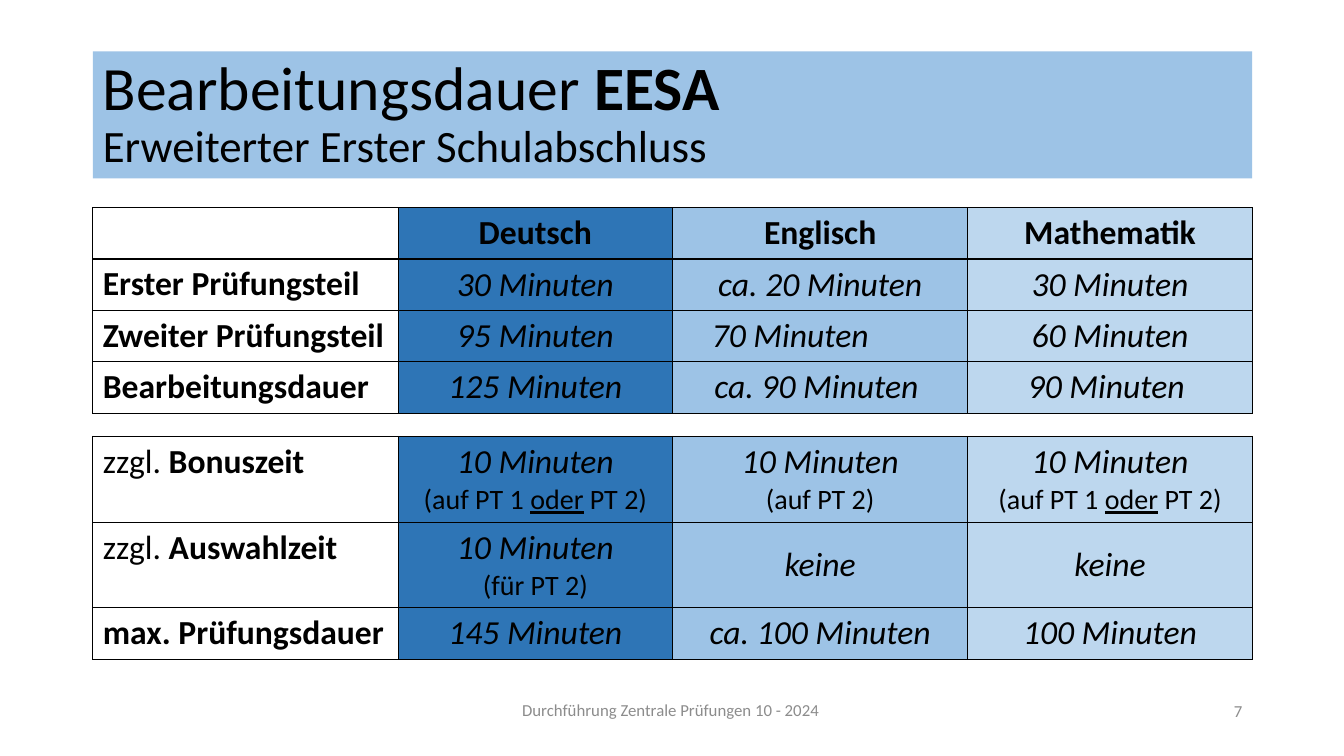
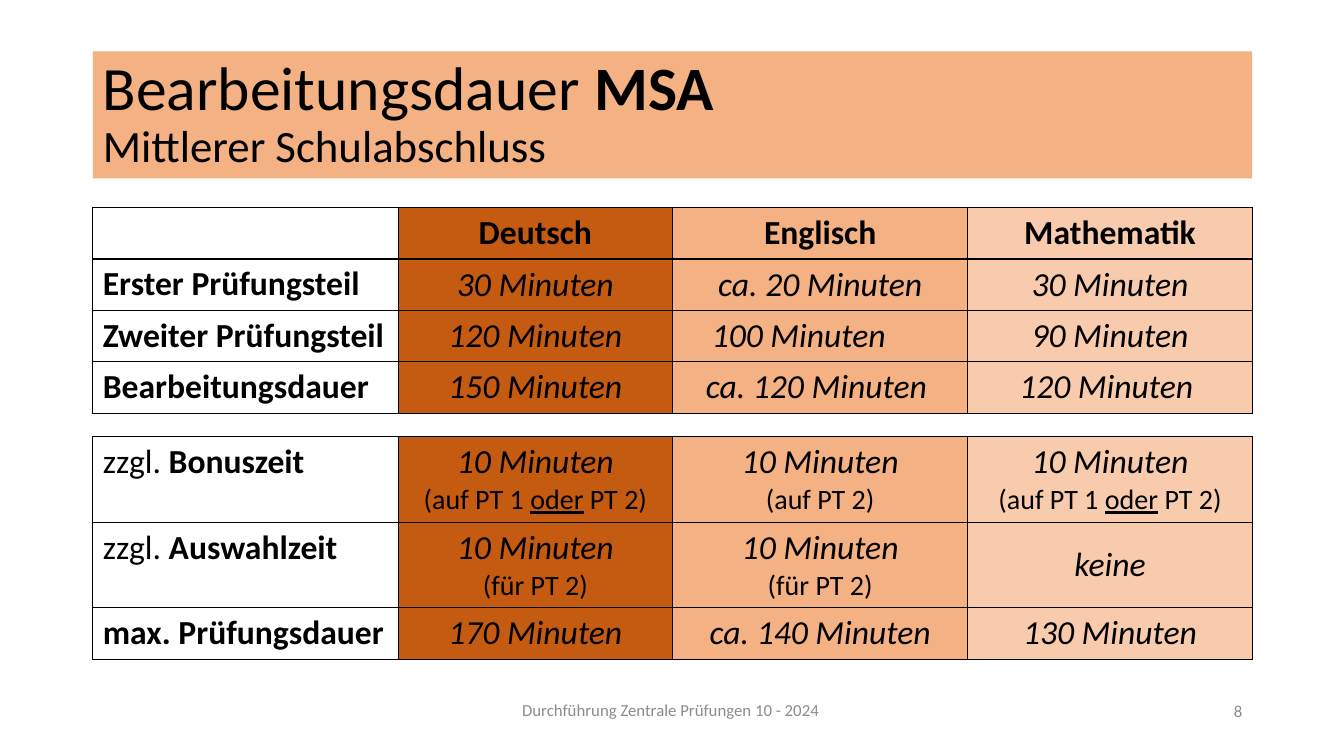
from dataclasses import dataclass

from lxml import etree
from pptx import Presentation
from pptx.dml.color import RGBColor
from pptx.enum.text import MSO_ANCHOR, MSO_AUTO_SIZE, PP_ALIGN
from pptx.oxml.ns import qn
from pptx.util import Inches, Pt

LEFT, CENTER, RIGHT = PP_ALIGN.LEFT, PP_ALIGN.CENTER, PP_ALIGN.RIGHT
TOP, MIDDLE = MSO_ANCHOR.TOP, MSO_ANCHOR.MIDDLE
NO_AUTOFIT = MSO_AUTO_SIZE.NONE

FONT = "Calibri"
BLACK, GRAY = "000000", "8C8C8C"
MARGIN, CONTENT_WIDTH = 0.92, 11.5
COLUMN_WIDTHS = (3.03, 2.72, 2.93, 2.82)
SINGLE_ROW, DOUBLE_ROW = 0.51, 0.85
FOOTER = "Durchführung Zentrale Prüfungen 10 - 2024"


@dataclass(frozen=True)
class Label:
    """Row heading: a plain prefix and a bold name."""
    name: str
    prefix: str = ""


@dataclass(frozen=True)
class Duration:
    """Exam time with an optional smaller note; an indent replaces centring."""
    time: str
    note: str = ""
    indent: float = 0


@dataclass(frozen=True)
class Row:
    label: Label
    durations: tuple[Duration, ...]
    height: float = SINGLE_ROW


@dataclass(frozen=True)
class Exam:
    short_name: str
    full_name: str
    page: int
    band: str
    subject_fills: tuple[str, str, str]
    working_times: tuple[Row, ...]
    extra_times: tuple[Row, ...]


SUBJECTS = ("Deutsch", "Englisch", "Mathematik")
FIRST_PART = Row(Label("Erster Prüfungsteil"), (
    Duration("30 Minuten"), Duration("ca. 20 Minuten"), Duration("30 Minuten")))
BONUS = Row(Label("Bonuszeit", "zzgl. "), (
    Duration("10 Minuten", "(auf PT 1 oder PT 2)"),
    Duration("10 Minuten", "(auf PT 2)"),
    Duration("10 Minuten", "(auf PT 1 oder PT 2)")), DOUBLE_ROW)
CHOICE_LABEL = Label("Auswahlzeit", "zzgl. ")
CHOICE = Duration("10 Minuten", "(für PT 2)")
NO_CHOICE = Duration("keine")


def second_part(german: str, english: str, maths: str) -> Row:
    return Row(Label("Zweiter Prüfungsteil"),
               (Duration(german), Duration(english, indent=0.29), Duration(maths)))


def total(name: str, *times: str) -> Row:
    return Row(Label(name), tuple(Duration(time) for time in times))


EXAMS = (
    Exam("EESA", "Erweiterter Erster Schulabschluss", 7, "9DC3E6",
         ("2E75B6", "9DC3E6", "BDD7EE"),
         (FIRST_PART,
          second_part("95 Minuten", "70 Minuten", "60 Minuten"),
          total("Bearbeitungsdauer", "125 Minuten", "ca. 90 Minuten ", "90 Minuten ")),
         (BONUS,
          Row(CHOICE_LABEL, (CHOICE, NO_CHOICE, NO_CHOICE), DOUBLE_ROW),
          total("max. Prüfungsdauer", "145 Minuten", "ca. 100 Minuten", "100 Minuten"))),
    Exam("MSA", "Mittlerer Schulabschluss", 8, "F4B183",
         ("C55A11", "F4B183", "F8CBAD"),
         (FIRST_PART,
          second_part("120 Minuten", "100 Minuten", "90 Minuten"),
          total("Bearbeitungsdauer", "150 Minuten", "ca. 120 Minuten ", "120 Minuten ")),
         (BONUS,
          Row(CHOICE_LABEL, (CHOICE, CHOICE, NO_CHOICE), DOUBLE_ROW),
          total("max. Prüfungsdauer", "170 Minuten", "ca. 140 Minuten", "130 Minuten"))),
)


def rgb(color: str) -> RGBColor:
    return RGBColor.from_string(color)


def fill(target, color: str) -> None:
    target.fill.solid()
    target.fill.fore_color.rgb = rgb(color)


def add_run(paragraph, text: str, *, size: float = 24, bold: bool = False,
            italic: bool = False, underline: bool = False, color: str = BLACK) -> None:
    run = paragraph.add_run()
    run.text = text
    font = run.font
    font.name, font.size = FONT, Pt(size)
    font.bold, font.italic, font.underline = bold, italic, underline
    font.color.rgb = rgb(color)


def add_title(slide, exam: Exam) -> None:
    title = slide.shapes.title
    title.left, title.top = Inches(MARGIN), Inches(0.51)
    title.width, title.height = Inches(CONTENT_WIDTH), Inches(1.26)
    fill(title, exam.band)
    frame = title.text_frame
    frame.auto_size, frame.vertical_anchor = NO_AUTOFIT, MIDDLE
    heading = frame.paragraphs[0]
    heading.alignment, heading.line_spacing = LEFT, 0.9
    add_run(heading, "Bearbeitungsdauer ", size=44)
    add_run(heading, exam.short_name, size=44, bold=True)
    heading.add_line_break()
    add_run(heading, exam.full_name, size=32)


def add_footer_text(slide, text: str, left: float, top: float, width: float,
                    height: float, *, align=LEFT, wrap: bool = True) -> None:
    box = slide.shapes.add_textbox(Inches(left), Inches(top), Inches(width), Inches(height))
    frame = box.text_frame
    frame.word_wrap, frame.vertical_anchor = wrap, MIDDLE
    frame.paragraphs[0].alignment = align
    add_run(frame.paragraphs[0], text, size=12, color=GRAY)


def set_borders(cell) -> None:
    properties = cell._tc.get_or_add_tcPr()
    for side in ("a:lnL", "a:lnR", "a:lnT", "a:lnB"):
        line = etree.SubElement(properties, qn(side), w=str(Pt(1)))
        solid = etree.SubElement(line, qn("a:solidFill"))
        etree.SubElement(solid, qn("a:srgbClr"), val=BLACK)


def write_label(cell, label: Label) -> None:
    cell.vertical_anchor = TOP
    paragraph = cell.text_frame.paragraphs[0]
    if label.prefix:
        add_run(paragraph, label.prefix)
    add_run(paragraph, label.name, bold=True)


def write_duration(cell, duration: Duration) -> None:
    cell.vertical_anchor = MIDDLE
    time = cell.text_frame.paragraphs[0]
    if duration.indent:
        time._p.get_or_add_pPr().set("marL", str(Inches(duration.indent)))
    else:
        time.alignment = CENTER
    add_run(time, duration.time, italic=True)
    if duration.note:
        note = cell.text_frame.add_paragraph()
        note.alignment = CENTER
        before, conjunction, after = duration.note.partition("oder")
        add_run(note, before, size=20)
        if conjunction:
            add_run(note, conjunction, size=20, underline=True)
            add_run(note, after, size=20)


def add_schedule(slide, top: float, rows: tuple[Row, ...], fills: tuple[str, ...],
                 *, header: bool = False) -> None:
    heights = [SINGLE_ROW] * header + [row.height for row in rows]
    schedule = slide.shapes.add_table(
        len(heights), len(COLUMN_WIDTHS), Inches(MARGIN), Inches(top),
        Inches(CONTENT_WIDTH), Inches(sum(heights))).table
    schedule.first_row = schedule.horz_banding = False
    for column, width in zip(schedule.columns, COLUMN_WIDTHS):
        column.width = Inches(width)
    for table_row, height in zip(schedule.rows, heights):
        table_row.height = Inches(height)
        for cell, color in zip(table_row.cells, (None, *fills)):
            set_borders(cell)
            if color:
                fill(cell, color)
            else:
                cell.fill.background()

    # Subject names
    if header:
        for column, subject in enumerate(SUBJECTS, start=1):
            cell = schedule.cell(0, column)
            write_label(cell, Label(subject))
            cell.text_frame.paragraphs[0].alignment = CENTER

    # Labels and times
    for index, row in enumerate(rows, start=int(header)):
        write_label(schedule.cell(index, 0), row.label)
        for column, duration in enumerate(row.durations, start=1):
            write_duration(schedule.cell(index, column), duration)


def add_exam_slide(presentation, exam: Exam) -> None:
    slide = presentation.slides.add_slide(presentation.slide_layouts.get_by_name("Title Only"))
    add_title(slide, exam)
    add_schedule(slide, 2.06, exam.working_times, exam.subject_fills, header=True)
    add_schedule(slide, 4.33, exam.extra_times, exam.subject_fills)
    add_footer_text(slide, FOOTER, 5.08, 6.89, 3.17, 0.3, wrap=False)
    add_footer_text(slide, str(exam.page), 9.42, 6.85, 3, 0.4, align=RIGHT)


def main() -> None:
    presentation = Presentation()
    presentation.slide_width, presentation.slide_height = Inches(13.33), Inches(7.5)
    for exam in EXAMS:
        add_exam_slide(presentation, exam)
    presentation.save("out.pptx")


if __name__ == "__main__":
    main()
